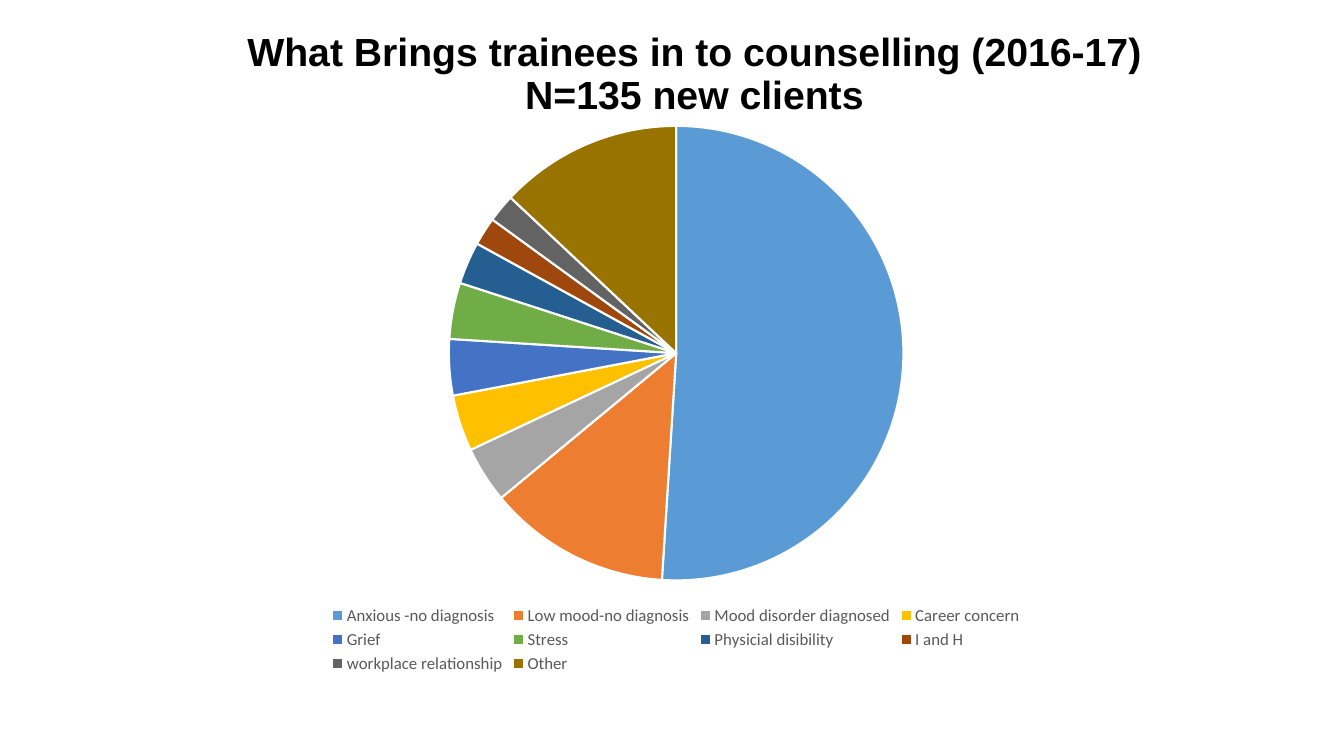
from pptx import Presentation
from pptx.chart.data import CategoryChartData
from pptx.dml.color import RGBColor
from pptx.enum.chart import XL_CHART_TYPE, XL_LEGEND_POSITION
from pptx.enum.text import MSO_ANCHOR, PP_ALIGN
from pptx.util import Pt

PIE = XL_CHART_TYPE.PIE
BOTTOM = XL_LEGEND_POSITION.BOTTOM
TOP = MSO_ANCHOR.TOP
CENTER = PP_ALIGN.CENTER

COLORS = {"title": "000000", "legend": "595959", "border": "FFFFFF"}

# Reason for counselling: (share in percent, slice colour)
REASONS = {
    "Anxious -no diagnosis": (51, "5B9BD5"),
    "Low mood-no diagnosis": (13, "ED7D31"),
    "Mood disorder diagnosed": (4, "A5A5A5"),
    "Career concern": (4, "FFC000"),
    "Grief": (4, "4472C4"),
    "Stress": (4, "70AD47"),
    "Physicial disibility": (3, "255E91"),
    "I and H": (2, "9E480E"),
    "workplace relationship": (2, "636363"),
    "Other": (13, "997300"),
}


class SlideBuilder:
    title_font = "Arial"
    chart_font = "Calibri"

    def __init__(self, slide):
        self.slide = slide

    def title(self, text, left, top, width, height):
        shape = self.slide.shapes.add_textbox(Pt(left), Pt(top), Pt(width), Pt(height))
        text_frame = shape.text_frame
        text_frame.word_wrap = True
        text_frame.vertical_anchor = TOP
        paragraph = text_frame.paragraphs[0]
        paragraph.text = text
        paragraph.alignment = CENTER
        paragraph.line_spacing = 0.9
        for run in paragraph.runs:
            self.style_font(run.font, self.title_font, 28, "title")
            run.font.bold = True

    def pie(self, reasons, left, top, width, height):
        data = CategoryChartData()
        data.categories = list(reasons)
        data.add_series("Series 1", [share for share, _ in reasons.values()])
        chart = self.slide.shapes.add_chart(
            PIE, Pt(left), Pt(top), Pt(width), Pt(height), data
        ).chart
        chart.has_title = False
        self.style_font(chart.font, self.chart_font, 10, "title")

        # Legend below the pie
        chart.has_legend = True
        chart.legend.position = BOTTOM
        chart.legend.include_in_layout = False
        self.style_font(chart.legend.font, self.chart_font, 12, "legend")

        # Slices with white borders
        plot = chart.plots[0]
        plot.vary_by_categories = True
        for index, (_, color) in enumerate(reasons.values()):
            slice_format = plot.series[0].points[index].format
            slice_format.fill.solid()
            slice_format.fill.fore_color.rgb = RGBColor.from_string(color)
            slice_format.line.color.rgb = RGBColor.from_string(COLORS["border"])
            slice_format.line.width = Pt(1.5)

    def style_font(self, font, name, size, color):
        font.name = name
        font.size = Pt(size)
        font.color.rgb = RGBColor.from_string(COLORS[color])


def main():
    presentation = Presentation()
    presentation.slide_width = Pt(960)
    presentation.slide_height = Pt(540)
    builder = SlideBuilder(presentation.slides.add_slide(presentation.slide_layouts[6]))

    builder.pie(REASONS, 161.5, 80, 643, 404)
    builder.title(
        "What Brings trainees in to counselling (2016-17)\vN=135 new clients",
        32, 20, 928, 87,
    )
    presentation.save("out.pptx")


if __name__ == "__main__":
    main()
